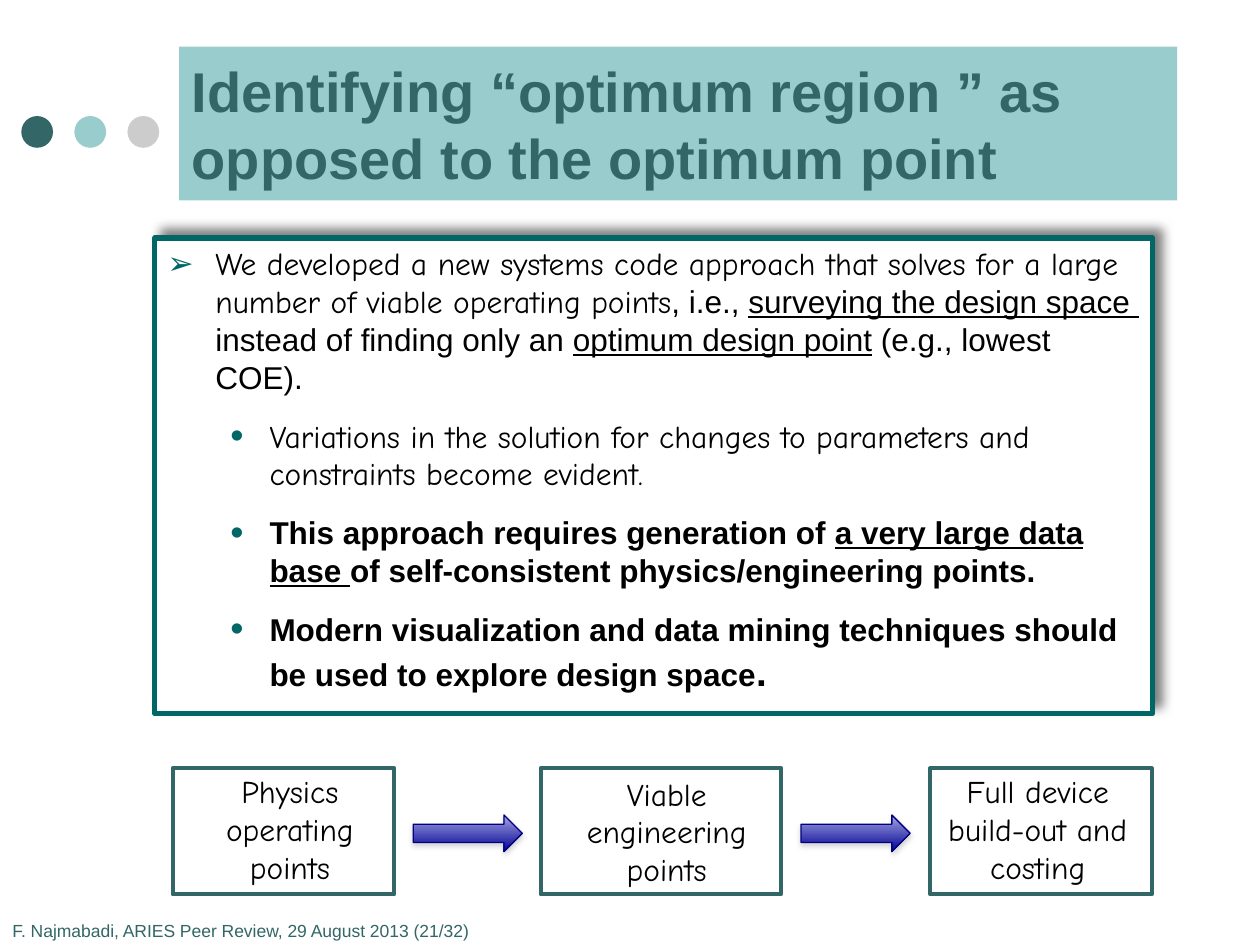
"""Build a slide on finding an optimum region, with a three-step flow below."""
import pptx
import pptx.util
import pptx.dml.color
import pptx.enum.shapes
import pptx.enum.text
import pptx.oxml
import pptx.oxml.ns

Cm, Pt = pptx.util.Cm, pptx.util.Pt
rgb = pptx.dml.color.RGBColor.from_string
Kind = pptx.enum.shapes.MSO_SHAPE
Align = pptx.enum.text.PP_ALIGN
Anchor = pptx.enum.text.MSO_ANCHOR
Fit = pptx.enum.text.MSO_AUTO_SIZE
theme = {
    "dark": "336666", "light": "99CCCC", "grey": "CCCCCC", "teal": "006666",
    "white": "FFFFFF", "ink": "000000", "navy": "000080",
    "top": "A6A6E2", "base": "000093", "shade": "808080",
    "head": 32, "text": 18, "stop": 22, "foot": 10,
    "sans": "Arial", "hand": "Comic Neue",
}


def write(para, text, font="sans", size="text", color="ink", bold=False, under=False):
    run = para.add_run()
    run.text = text
    run.font.name = theme[font]
    run.font.size = Pt(theme[size])
    run.font.color.rgb = rgb(theme[color])
    run.font.bold = bold
    run.font.underline = under


def shadow(shape, color, alpha, blur, dist, angle):
    shape.shadow.inherit = False
    glow = pptx.oxml.parse_xml(
        f'<a:outerShdw {pptx.oxml.ns.nsdecls("a")} blurRad="{Pt(blur)}" dist="{Pt(dist)}" '
        f'dir="{angle * 60000}" algn="tl" rotWithShape="0"><a:srgbClr val="{theme[color]}">'
        f'<a:alpha val="{alpha * 1000}"/></a:srgbClr></a:outerShdw>')
    shape._element.spPr.find(pptx.oxml.ns.qn("a:effectLst")).append(glow)


deck = pptx.Presentation()
deck.slide_width, deck.slide_height = Cm(25.4), Cm(19.05)
slide = deck.slides.add_slide(deck.slide_layouts[1])
shapes = slide.shapes

for i, tone in enumerate(("dark", "light", "grey")):
    dot = shapes.add_shape(Kind.OVAL, Cm(0.43 + 1.07 * i), Cm(2.34), Cm(0.64), Cm(0.64))
    dot.shadow.inherit = False
    dot.fill.solid()
    dot.fill.fore_color.rgb = rgb(theme[tone])
    dot.line.fill.background()

title = shapes.title
title.left, title.top, title.width, title.height = Cm(3.61), Cm(0.94), Cm(20.12), Cm(3.1)
title.fill.solid()
title.fill.fore_color.rgb = rgb(theme["light"])
frame = title.text_frame
frame.auto_size = Fit.NONE
frame.vertical_anchor = Anchor.MIDDLE
frame.paragraphs[0].alignment = Align.LEFT
write(frame.paragraphs[0], "Identifying “optimum region ” as opposed to the optimum point",
      size="head", color="dark", bold=True)

body = slide.placeholders[1]
body.left, body.top, body.width, body.height = Cm(3.12), Cm(4.8), Cm(20.12), Cm(9.58)
body.fill.solid()
body.fill.fore_color.rgb = rgb(theme["white"])
body.line.color.rgb = rgb(theme["teal"])
body.line.width = Pt(3)
shadow(body, "ink", 50, 6, 6, 315)
body.text_frame.auto_size = Fit.NONE

hand, line, bold = {"font": "hand"}, {"under": True}, {"bold": True}
items = [
    [("We developed a new systems code approach that solves for a large number of "
      "viable operating points", hand),
     (", i.e., ", {}), ("surveying the design space ", line),
     (" instead of finding only an ", {}), ("optimum design point", line),
     (" (e.g., lowest COE).", {})],
    [("Variations in the solution for changes to parameters and constraints become evident.",
      hand)],
    [("This approach requires generation of ", bold),
     ("a very large data base ", bold | line),
     ("of self-consistent physics/engineering points.", bold)],
    [("Modern visualization and data mining techniques should be used to explore design space",
      bold), (".", bold | {"size": "stop"})],
]
for i, runs in enumerate(items):
    para = body.text_frame.paragraphs[0] if i == 0 else body.text_frame.add_paragraph()
    para.level = 1
    para.space_before = Pt(12 if i else 3.6)
    left, hang, mark, scale = (2.06, 0.79, "•", 120) if i else (0.97, 0.97, "➢", 100)
    props = para._p.get_or_add_pPr()
    props.set("marL", str(Cm(left)))
    props.set("indent", str(-Cm(hang)))
    for tag in (f'buClr {{}}><a:srgbClr val="{theme["teal"]}"/></a:buClr>',
                f'buSzPct {{}} val="{scale * 1000}"/>',
                f'buFont {{}} typeface="{theme["sans"]}"/>',
                f'buChar {{}} char="{mark}"/>'):
        props.append(pptx.oxml.parse_xml("<a:" + tag.format(pptx.oxml.ns.nsdecls("a"))))
    for text, form in runs:
        write(para, text, **form)

steps = [
    ("Physics operating points", 3.48, 4.47, 4.22, 15.44, 3.25),
    ("Viable engineering points", 10.9, 4.85, 10.9, 15.49, 5.08),
    ("Full device build-out and costing", 18.75, 4.47, 18.75, 15.44, 4.34),
]
for text, left, width, start, top, span in steps:
    box = shapes.add_shape(Kind.RECTANGLE, Cm(left), Cm(15.49), Cm(width), Cm(2.54))
    box.shadow.inherit = False
    box.fill.background()
    box.line.color.rgb = rgb(theme["dark"])
    box.line.width = Pt(2.25)
    label = shapes.add_textbox(Cm(start), Cm(top), Cm(span), Cm(2.57))
    label.text_frame.word_wrap = True
    label.text_frame.paragraphs[0].alignment = Align.CENTER
    write(label.text_frame.paragraphs[0], text, font="hand")

for left in (8.33, 16.15):
    arrow = shapes.add_shape(Kind.RIGHT_ARROW, Cm(left), Cm(16.43), Cm(2.2), Cm(0.74))
    arrow.fill.gradient()
    arrow.fill.gradient_angle = 270
    for stop, tone in zip(arrow.fill.gradient_stops, ("top", "base")):
        stop.color.rgb = rgb(theme[tone])
    arrow.line.color.rgb = rgb(theme["navy"])
    arrow.line.width = Pt(0.75)
    shadow(arrow, "shade", 35, 3, 1.8, 90)

foot = shapes.add_textbox(0, Cm(18.42), Cm(14.3), Cm(0.63))
foot.text_frame.word_wrap = True
write(foot.text_frame.paragraphs[0], "F. Najmabadi, ARIES Peer Review, 29 August 2013 (21/32)",
      size="foot", color="dark")

deck.save("out.pptx")
